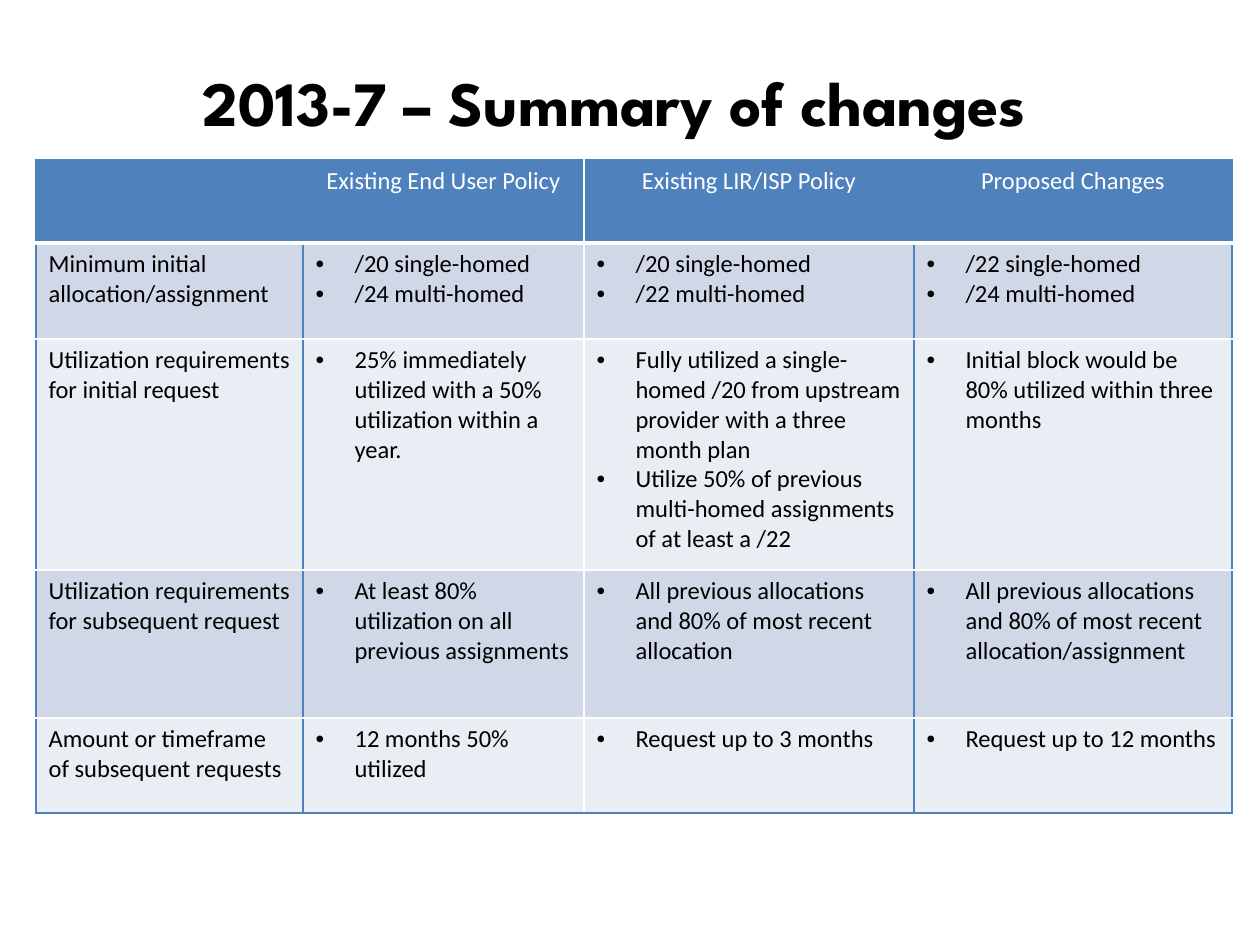
from lxml import etree
from pptx import Presentation
from pptx.dml.color import RGBColor
from pptx.enum.text import MSO_ANCHOR, PP_ALIGN
from pptx.oxml.ns import qn
from pptx.util import Emu, Pt

PX = 914400 // 126
CENTER, LEFT, MIDDLE = PP_ALIGN.CENTER, PP_ALIGN.LEFT, MSO_ANCHOR.MIDDLE

BLACK = RGBColor(0x00, 0x00, 0x00)
WHITE = RGBColor(0xFF, 0xFF, 0xFF)
BLUE = RGBColor(0x4F, 0x81, 0xBD)
BANDS = RGBColor(0xE9, 0xED, 0xF4), RGBColor(0xD0, 0xD8, 0xE8)

TITLE = "2013-7 – Summary of changes"
TITLE_BOX = 84, 52, 1061, 98
HEADERS = ["", "Existing End User Policy", "Existing LIR/ISP Policy", "Proposed Changes"]
ROWS = [
    ("Minimum initial allocation/assignment",
     ["/20 single-homed", "/24 multi-homed"],
     ["/20 single-homed", "/22 multi-homed"],
     ["/22 single-homed", "/24 multi-homed"]),
    ("Utilization requirements for initial request",
     ["25% immediately utilized with a 50% utilization within a year."],
     ["Fully utilized a single-homed /20 from upstream provider with a three month plan",
      "Utilize 50% of previous multi-homed assignments of at least a /22"],
     ["Initial block would be 80% utilized within three months"]),
    ("Utilization requirements for subsequent request",
     ["At least 80% utilization on all previous assignments"],
     ["All previous allocations and 80% of most recent allocation"],
     ["All previous allocations and 80% of most recent allocation/assignment"]),
    ("Amount or timeframe of subsequent requests",
     ["12 months 50% utilized"],
     ["Request up to 3 months"],
     ["Request up to 12 months"]),
]
TABLE_LEFT, TABLE_TOP = 36, 160
COL_WIDTHS = [267, 281, 330, 318]
ROW_HEIGHTS = [83, 96, 231, 148, 95]
BULLET_INDENT = 39


def px(n):
    return Emu(n * PX)


def add_run(p, text, font, size, color, bold=False):
    r = p.add_run()
    r.text = text
    r.font.name = font
    r.font.size = Pt(size)
    r.font.bold = bold
    r.font.color.rgb = color


def add_bullet(p):
    pPr = p._p.get_or_add_pPr()
    pPr.set("marL", str(px(BULLET_INDENT)))
    pPr.set("indent", str(-px(BULLET_INDENT)))
    etree.SubElement(pPr, qn("a:buFont")).set("typeface", "Arial")
    etree.SubElement(pPr, qn("a:buChar")).set("char", "•")


def set_borders(cell, borders):
    """Borders are (color, points) in the order left, right, top, bottom."""
    tcPr = cell._tc.get_or_add_tcPr()
    for i, (side, (color, width)) in enumerate(zip("LRTB", borders)):
        ln = etree.Element(qn(f"a:ln{side}"), w=str(Pt(width)))
        fill = etree.SubElement(ln, qn("a:solidFill"))
        etree.SubElement(fill, qn("a:srgbClr")).set("val", str(color))
        tcPr.insert(i, ln)


def cell_borders(row, col):
    """White rules between rows and around the middle divider, blue elsewhere."""
    left = WHITE if col == 2 else BLUE
    right = WHITE if col == 1 else BLUE
    top = BLUE if row == 0 else WHITE
    bottom = BLUE if row == len(ROWS) else WHITE
    return (left, 1), (right, 1), (top, 1), (bottom, 3 if row == 0 else 1)


def fill_cell(cell, content, row):
    bulleted = isinstance(content, list)
    tf = cell.text_frame
    for i, text in enumerate(content if bulleted else [content]):
        p = tf.paragraphs[0] if i == 0 else tf.add_paragraph()
        p.alignment = LEFT if row else CENTER
        if bulleted:
            add_bullet(p)
        if text:
            add_run(p, text, "Calibri", 14, BLACK if row else WHITE)


def add_title(s):
    tf = s.shapes.add_textbox(*map(px, TITLE_BOX)).text_frame
    tf.word_wrap = True
    tf.vertical_anchor = MIDDLE
    p = tf.paragraphs[0]
    p.alignment = CENTER
    add_run(p, TITLE, "League Spartan", 36, BLACK, bold=True)


def add_policy_table(s):
    rows = [HEADERS, *ROWS]
    table = s.shapes.add_table(
        len(rows), len(HEADERS), px(TABLE_LEFT), px(TABLE_TOP),
        px(sum(COL_WIDTHS)), px(sum(ROW_HEIGHTS))).table
    for column, width in zip(table.columns, COL_WIDTHS):
        column.width = px(width)
    for i, (contents, height) in enumerate(zip(rows, ROW_HEIGHTS)):
        table.rows[i].height = px(height)
        for j, content in enumerate(contents):
            cell = table.cell(i, j)
            cell.fill.solid()
            cell.fill.fore_color.rgb = BANDS[i % 2] if i else BLUE
            set_borders(cell, cell_borders(i, j))
            fill_cell(cell, content, i)


def main():
    prs = Presentation()
    prs.slide_width, prs.slide_height = px(1260), px(945)
    s = prs.slides.add_slide(prs.slide_layouts[6])
    add_title(s)
    add_policy_table(s)
    prs.save("out.pptx")


if __name__ == "__main__":
    main()
